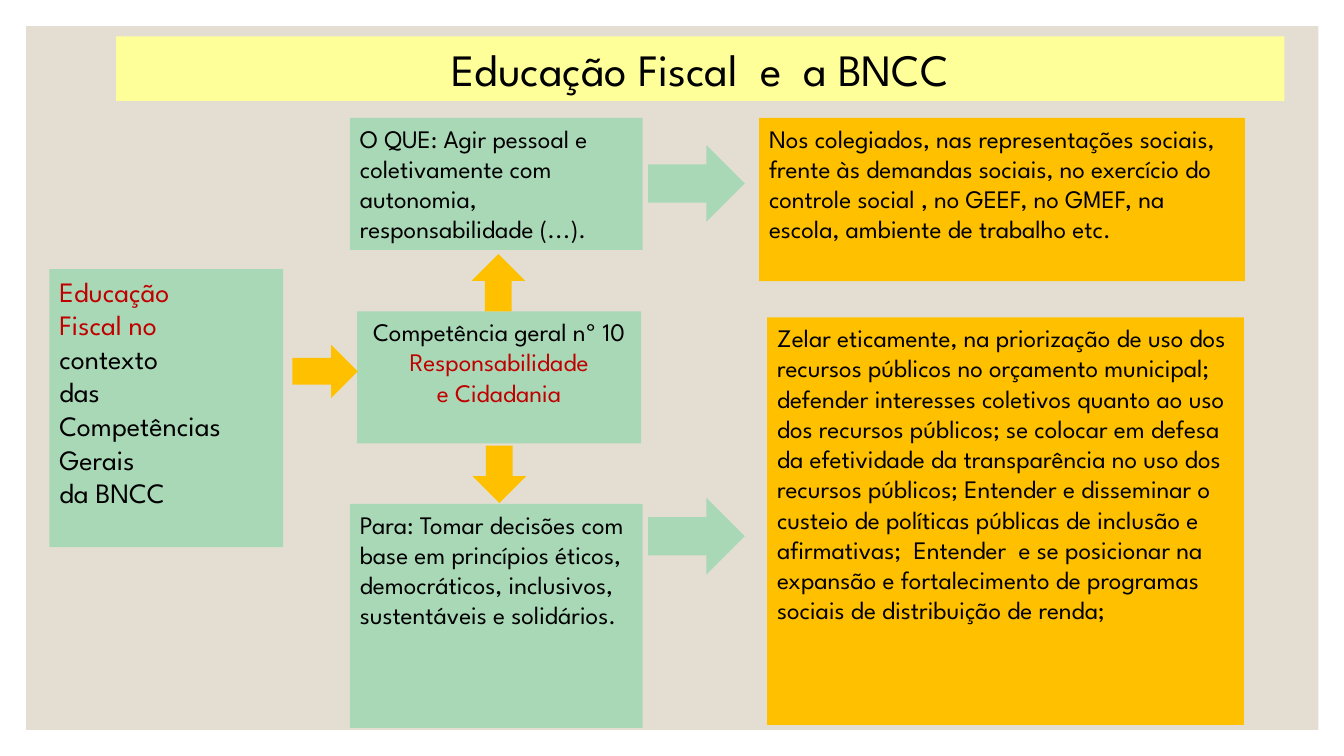
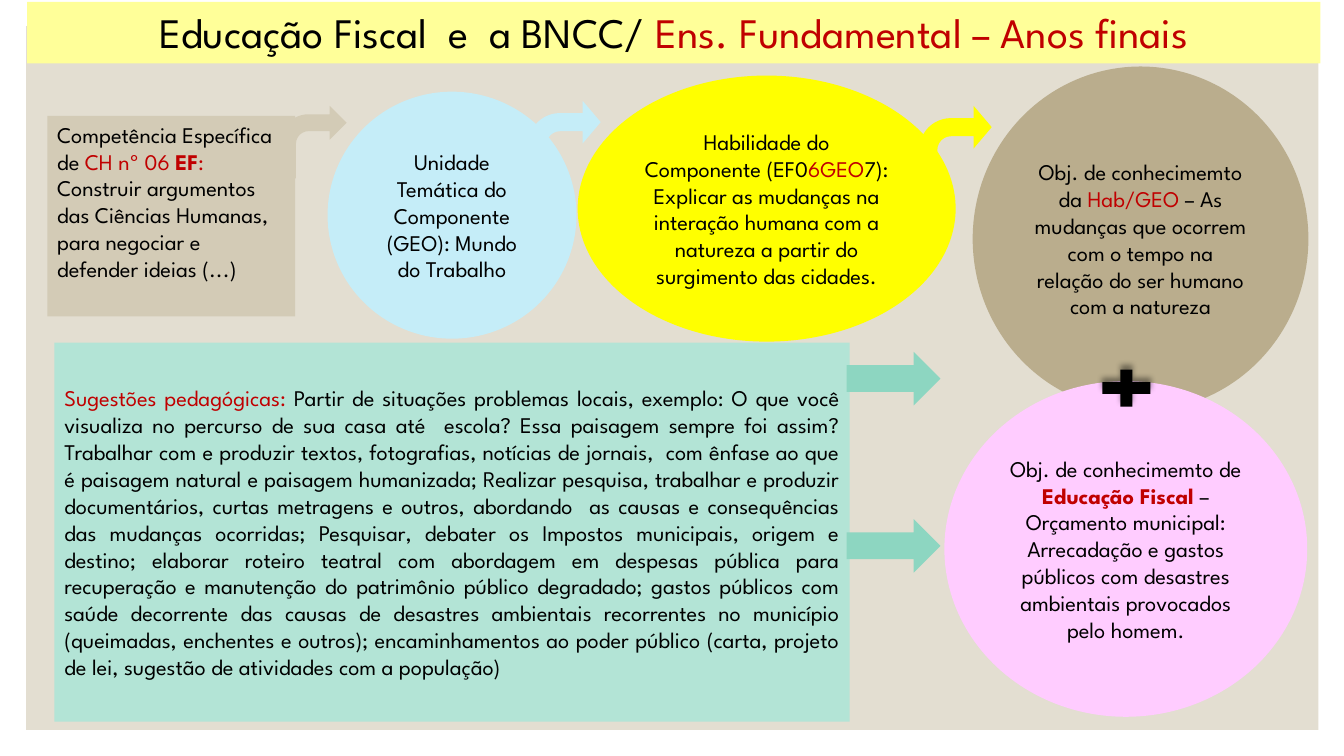
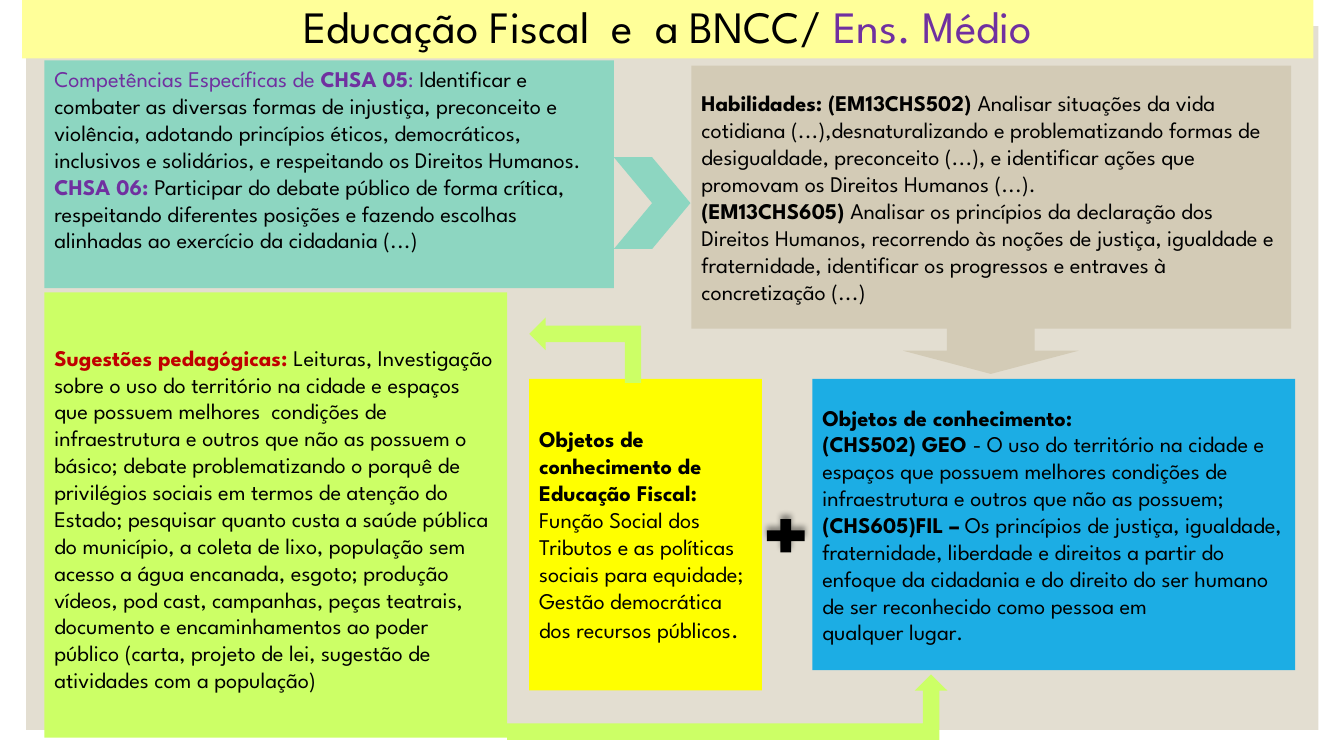
from collections import namedtuple

from lxml import etree
from pptx import Presentation
from pptx.dml.color import RGBColor
from pptx.enum.shapes import MSO_SHAPE
from pptx.enum.text import MSO_ANCHOR, PP_ALIGN
from pptx.oxml.ns import qn
from pptx.util import Pt

RECT = MSO_SHAPE.RECTANGLE
ELLIPSE = MSO_SHAPE.OVAL
RIGHT_ARROW = MSO_SHAPE.RIGHT_ARROW
DOWN_ARROW = MSO_SHAPE.DOWN_ARROW
BENT_ARROW = MSO_SHAPE.BENT_ARROW
BENT_UP_ARROW = MSO_SHAPE.BENT_UP_ARROW
CHEVRON = MSO_SHAPE.CHEVRON
PLUS = MSO_SHAPE.MATH_PLUS
TOP, MIDDLE = MSO_ANCHOR.TOP, MSO_ANCHOR.MIDDLE
LEFT, CENTER, JUSTIFY = PP_ALIGN.LEFT, PP_ALIGN.CENTER, PP_ALIGN.JUSTIFY

FONT = "League Spartan"
COLORS = {
    "ink": "000000",
    "red": "C00000",
    "purple": "7030A0",
    "backdrop": "E3DED1",
    "band": "FFFF99",
    "green": "A9D8B7",
    "amber": "FFC000",
    "sand": "D3CBB6",
    "khaki": "BAAD8D",
    "sky": "C5EDF8",
    "yellow": "FFFF00",
    "pink": "FFCCFF",
    "mint": "B3E4D6",
    "teal": "8DD6C1",
    "lime": "CCFF66",
    "blue": "1CADE4",
}

Run = namedtuple("Run", "text color bold size", defaults=("ink", False, None))


def color(name):
    return RGBColor.from_string(COLORS[name])


def add_figure(slide, kind, frame, fill, rotation=0, adjustments=()):
    figure = slide.shapes.add_shape(kind, *(Pt(length) for length in frame))
    figure.shadow.inherit = False
    figure.fill.solid()
    figure.fill.fore_color.rgb = color(fill)
    figure.line.fill.background()
    figure.rotation = rotation
    for index, value in enumerate(adjustments):
        figure.adjustments[index] = value
    return figure


def add_panel(slide, frame, fill, paragraphs, size=16, kind=RECT,
              align=LEFT, anchor=TOP, top_inset=3.6):
    text_frame = add_figure(slide, kind, frame, fill).text_frame
    text_frame.word_wrap = True
    text_frame.vertical_anchor = anchor
    text_frame.margin_top = Pt(top_inset)
    for index, runs in enumerate(paragraphs):
        paragraph = text_frame.add_paragraph() if index else text_frame.paragraphs[0]
        paragraph.alignment = align
        for part in runs:
            run = paragraph.add_run()
            run.text = part.text
            run.font.name = FONT
            run.font.size = Pt(part.size or size)
            run.font.bold = part.bold
            run.font.color.rgb = color(part.color)


def add_circle(slide, frame, fill, runs):
    add_panel(slide, frame, fill, [runs], kind=ELLIPSE, align=CENTER, anchor=MIDDLE)


def add_plus(slide, frame):
    plus = add_figure(slide, PLUS, frame, "ink")
    effects = plus._element.spPr.find(qn("a:effectLst"))
    shadow = etree.SubElement(effects, qn("a:outerShdw"), blurRad=str(Pt(4)),
                              dist=str(Pt(3)), dir="16200000", rotWithShape="0")
    tint = etree.SubElement(shadow, qn("a:srgbClr"), val=COLORS["ink"])
    etree.SubElement(tint, qn("a:alpha"), val="40000")


def add_titled_slide(deck, frame, runs, size=32):
    slide = deck.slides.add_slide(deck.slide_layouts[6])
    add_figure(slide, RECT, (18.7, 18.7, 923, 502.6), "backdrop")
    add_panel(slide, frame, "band", [runs], size=size, align=CENTER)
    return slide


def build_overview(deck):
    slide = add_titled_slide(deck, (83, 26, 834.5, 46),
                             [Run("Educação Fiscal  e  a BNCC")])
    add_panel(slide, (35.3, 192.2, 167, 198.7), "green", [
        [Run("Educação", "red")],
        [Run("Fiscal no", "red")],
        [Run("contexto")],
        [Run("das")],
        [Run("Competências Gerais")],
        [Run("da BNCC")],
    ], size=20)
    add_panel(slide, (250, 84.2, 209, 94.3), "green", [[Run(
        "O QUE: Agir pessoal e coletivamente com autonomia, "
        "responsabilidade (...).")]], size=18)
    add_panel(slide, (250, 360, 209, 160), "green", [[Run(
        "Para: Tomar decisões com base em princípios éticos, democráticos, "
        "inclusivos, sustentáveis e solidários.")]], size=18)
    add_panel(slide, (255, 222.5, 203, 94.3), "green", [
        [Run("Competência geral nº 10")],
        [Run("Responsabilidade", "red")],
        [Run("e Cidadania", "red")],
    ], size=18, align=CENTER)
    for frame, rotation in [((208.8, 246.2, 46.8, 38.2), 0),
                            ((335.5, 182.9, 41, 38.2), 270),
                            ((336.2, 319.7, 41, 38.2), 90)]:
        add_figure(slide, RIGHT_ARROW, frame, "amber", rotation)
    add_panel(slide, (542.2, 84.2, 347, 116.6), "amber", [[Run(
        "Nos colegiados, nas representações sociais, frente às demandas sociais, "
        "no exercício do controle social , no GEEF, no GMEF, na escola, "
        "ambiente de trabalho etc.")]], size=18)
    for top in (103.7, 355.7):
        add_figure(slide, RIGHT_ARROW, (463, top, 69, 54.7), "green")
    add_panel(slide, (548, 226.8, 340.6, 291), "amber", [[Run(
        "Zelar eticamente, na priorização de uso dos recursos públicos no orçamento "
        "municipal; defender interesses coletivos quanto ao uso dos recursos "
        "públicos; se colocar em defesa da efetividade da transparência no uso dos "
        "recursos públicos; Entender e disseminar o custeio de políticas públicas de "
        "inclusão e afirmativas;  Entender  e se posicionar na expansão e "
        "fortalecimento de programas sociais de distribuição de renda;")]], size=18)


def build_middle_years(deck):
    slide = add_titled_slide(deck, (19.4, 1.4, 923.8, 44), [
        Run("Educação Fiscal  e  a BNCC/ "),
        Run("Ens. Fundamental – Anos finais", "red"),
    ], size=30)
    add_panel(slide, (33.8, 82.8, 177, 143.3), "sand", [[
        Run("Competência Específica de "),
        Run("CH nº 06 ", "red"),
        Run("EF", "red", True),
        Run(":", "red"),
        Run(" Construir argumentos das Ciências Humanas, para negociar e "
            "defender ideias (...)"),
    ]])
    add_circle(slide, (234, 65.5, 177.8, 176.4), "sky", [
        Run("Unidade Temática do Componente (GEO): Mundo do Trabalho")])
    add_figure(slide, BENT_ARROW, (199.4, 75.6, 48.2, 51.8), "sand")
    add_circle(slide, (412.6, 54, 270, 190), "yellow", [
        Run("Habilidade do Componente (EF0"),
        Run("6GEO", "red"),
        Run("7): Explicar as mudanças na interação humana com a natureza a "
            "partir do surgimento das cidades."),
    ])
    add_circle(slide, (694.8, 47.5, 239.8, 246.2), "khaki", [
        Run("Obj. de conhecimemto da "),
        Run("Hab/GEO", "red"),
        Run(" – As mudanças que ocorrem com o tempo na relação do ser humano "
            "com a natureza"),
    ])
    add_circle(slide, (674.6, 272.2, 259.2, 239.8), "pink", [
        Run("Obj. de conhecimemto de "),
        Run("Educação Fiscal ", "red", True),
        Run("– Orçamento municipal: Arrecadação e gastos públicos com desastres "
            "ambientais provocados pelo homem."),
    ])
    add_plus(slide, (781.2, 259.2, 46.8, 36))
    add_panel(slide, (38.9, 244.8, 568, 270.7), "mint", [[
        Run("Sugestões pedagógicas: ", "red"),
        Run("Partir de situações problemas locais, exemplo: O que você visualiza no "
            "percurso de sua casa até  escola? Essa paisagem sempre foi assim? "
            "Trabalhar com e produzir textos, fotografias, notícias de jornais,  com "
            "ênfase ao que é paisagem natural e paisagem humanizada; Realizar "
            "pesquisa, trabalhar e produzir documentários, curtas metragens e outros, "
            "abordando  as causas e consequências das mudanças ocorridas; "),
        Run("Pesquisar, debater os Impostos municipais, origem e destino; elaborar "
            "roteiro teatral com abordagem em despesas pública para recuperação e "
            "manutenção do patrimônio público degradado; gastos públicos com saúde "
            "decorrente das causas de desastres ambientais recorrentes no município "
            "(queimadas, enchentes e outros); encaminhamentos ao poder público "
            "(carta, projeto de lei, sugestão de atividades com a população)"),
    ]], align=JUSTIFY, anchor=MIDDLE)
    for top in (251.3, 370.8):
        add_figure(slide, RIGHT_ARROW, (604.8, top, 67, 38.2), "teal")
    for left, top, fill in [(377.3, 72, "sky"), (656.6, 75.6, "yellow")]:
        add_figure(slide, BENT_ARROW, (left, top, 51.8, 52.6), fill,
                   adjustments=(0.25, 0.295, 0.25, 0.438))


def build_high_school(deck):
    slide = add_titled_slide(deck, (15.8, -4.3, 922.3, 46), [
        Run("Educação Fiscal  e  a BNCC/ "),
        Run("Ens. Médio", "purple"),
    ])
    add_panel(slide, (31.7, 43.2, 406.8, 162.7), "teal", [
        [Run("Competências Específicas de ", "purple"),
         Run("CHSA 05", "purple", True),
         Run(": ", "purple"),
         Run("Identificar e combater as diversas formas de injustiça, preconceito e "
             "violência, adotando princípios éticos, democráticos, inclusivos e "
             "solidários, e respeitando os Direitos Humanos.")],
        [Run("CHSA 06: ", "purple", True),
         Run("Participar do debate público de forma crítica, respeitando diferentes "
             "posições e fazendo escolhas alinhadas ao exercício da cidadania (...)")],
    ])
    add_plus(slide, (542.9, 366.5, 36.7, 32.4))
    add_panel(slide, (31.7, 208.8, 330.5, 318.2), "lime", [[
        Run("Sugestões pedagógicas: ", "red", True),
        Run("Leituras, Investigação sobre o uso do território na cidade e espaços que "
            "possuem melhores  condições de infraestrutura e outros que não as "
            "possuem o básico; debate problematizando o porquê de privilégios sociais "
            "em termos de atenção do Estado; pesquisar quanto custa a saúde pública "
            "do município, a coleta de lixo, população sem acesso a água encanada, "
            "esgoto; produção vídeos, pod cast, campanhas, peças teatrais, documento "
            "e encaminhamentos ao poder público (carta, projeto de lei, sugestão de "
            "atividades com a população)"),
    ]], anchor=MIDDLE, top_inset=8.4)
    add_panel(slide, (493.9, 46.8, 428.4, 187.9), "sand", [
        [Run("Habilidades: (EM13CHS502) ", bold=True),
         Run("Analisar situações da vida cotidiana (...),desnaturalizando e "
             "problematizando formas de desigualdade, preconceito (...), e "
             "identificar ações que promovam os Direitos Humanos (...).")],
        [Run("(EM13CHS605) ", bold=True),
         Run("Analisar os princípios da declaração dos Direitos Humanos, recorrendo "
             "às noções de justiça, igualdade e fraternidade, identificar os "
             "progressos e entraves à concretização (...)")],
    ], anchor=MIDDLE)
    add_figure(slide, CHEVRON, (438.5, 112.3, 54.7, 65.5), "teal")
    add_panel(slide, (580.3, 270.7, 344.9, 208), "blue", [
        [Run("Objetos de conhecimento:", bold=True)],
        [Run("(CHS502) GEO ", bold=True),
         Run("- O uso do território na cidade e espaços que possuem melhores "
             "condições de infraestrutura e outros que não as possuem;")],
        [Run("(CHS605)FIL –", bold=True),
         Run(" Os princípios de justiça, igualdade, fraternidade, liberdade e "
             "direitos a partir do enfoque da cidadania e do direito do ser humano "
             "de ser reconhecido como pessoa em")],
        [Run("qualquer lugar.")],
    ], anchor=MIDDLE)
    add_figure(slide, DOWN_ARROW, (645.1, 234, 125.3, 33.1), "sand")
    add_panel(slide, (378, 270.7, 166.3, 222.5), "yellow", [
        [Run("Objetos de conhecimento de Educação Fiscal:", bold=True)],
        [Run("Função Social dos Tributos e as políticas sociais para equidade; "
             "Gestão democrática dos recursos públicos"),
         Run(".", size=18)],
    ], anchor=MIDDLE)
    add_figure(slide, BENT_UP_ARROW, (362.2, 481.7, 314.6, 46.8), "lime")
    add_figure(slide, BENT_UP_ARROW, (394.6, 210.2, 46.8, 79.9), "lime", 270)


def main():
    deck = Presentation()
    deck.slide_width, deck.slide_height = Pt(960), Pt(540)
    build_overview(deck)
    build_middle_years(deck)
    build_high_school(deck)
    deck.save("out.pptx")


if __name__ == "__main__":
    main()
